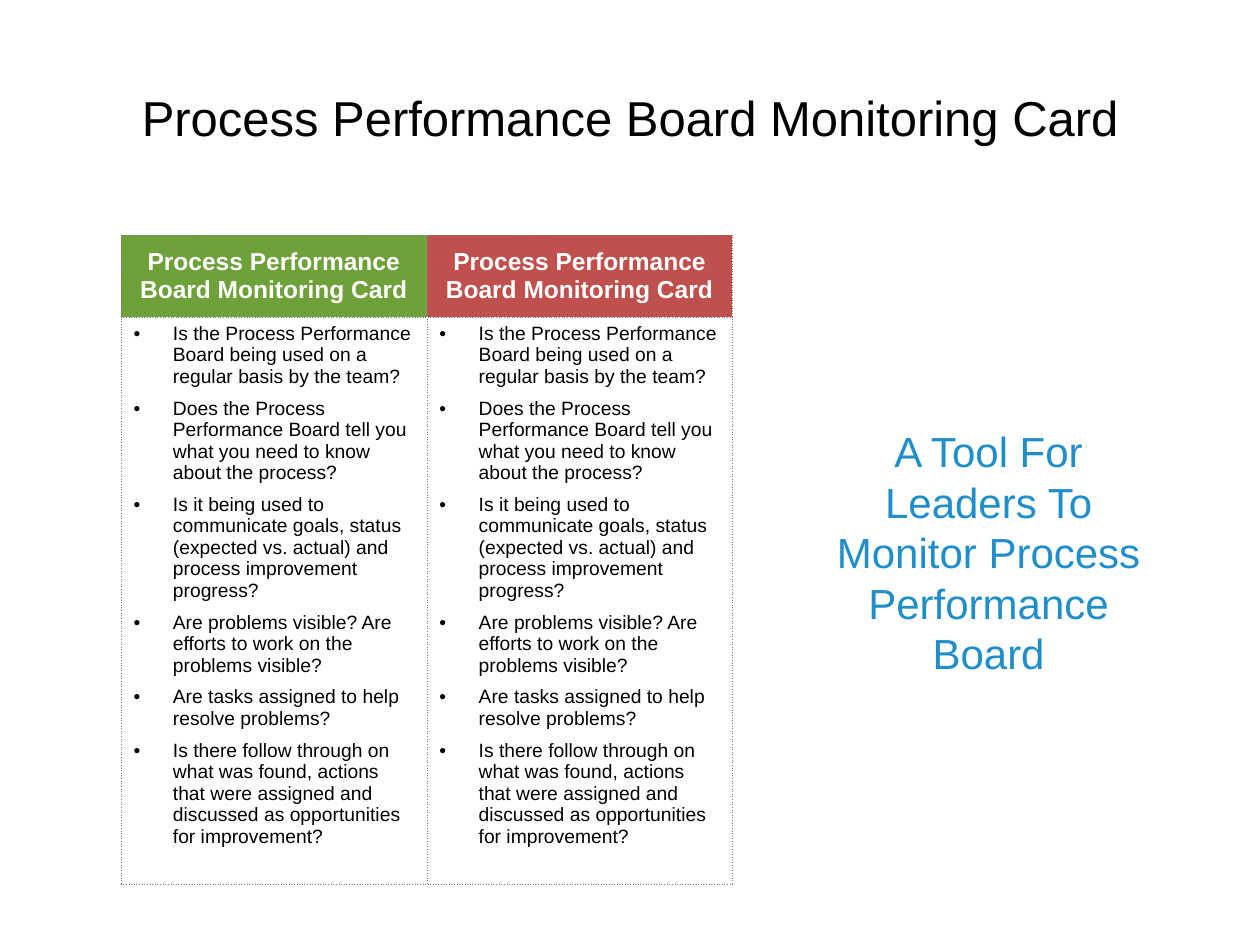
from dataclasses import dataclass

from lxml import etree
from pptx import Presentation
from pptx.dml.color import RGBColor
from pptx.enum import text as t
from pptx.oxml import ns
from pptx.util import Pt

COLORS = {
    "ink": "000000",
    "white": "FFFFFF",
    "green": "6EA139",
    "red": "C0504D",
    "blue": "208ECB",
    "border": "7F7F7F",
}
FONT = "Arial"
CARD_TITLE = "Process Performance Board Monitoring Card"
QUESTIONS = [
    "Is the Process Performance Board being used on a regular basis by the team?",
    "Does the Process Performance Board tell you what you need to know about the process?",
    "Is it being used to communicate goals, status (expected vs. actual) "
    "and process improvement progress?",
    "Are problems visible? Are efforts to work on the problems visible?",
    "Are tasks assigned to help resolve problems?",
    "Is there follow through on what was found, actions that were assigned "
    "and discussed as opportunities for improvement?",
]
CARD_COLORS = ["green", "red"]
CARD_WIDTH = 174.75
HEADER_HEIGHT, BODY_HEIGHT = 46.8, 324.5
BULLET_INDENT = 22.5


@dataclass
class Caption:
    wording: str
    left: float
    top: float
    width: float
    height: float
    size: float
    color: str
    anchor: t.MSO_ANCHOR


CAPTIONS = [
    Caption(CARD_TITLE, 36, 21.6, 648, 90, 28, "ink", t.MSO_ANCHOR.MIDDLE),
    Caption("A Tool For Leaders To Monitor Process Performance Board",
            466.6, 239.8, 196.6, 152.6, 24, "blue", t.MSO_ANCHOR.TOP),
]


def rgb(color: str) -> RGBColor:
    return RGBColor.from_string(COLORS[color])


def style_paragraph(paragraph, size: float, color: str, bold: bool = False) -> None:
    for run in paragraph.runs:
        run.font.name = FONT
        run.font.size = Pt(size)
        run.font.bold = bold
        run.font.color.rgb = rgb(color)


def add_caption(slide, caption: Caption) -> None:
    box = slide.shapes.add_textbox(
        Pt(caption.left), Pt(caption.top), Pt(caption.width), Pt(caption.height))
    frame = box.text_frame
    frame.word_wrap = True
    frame.vertical_anchor = caption.anchor
    frame.text = caption.wording
    paragraph = frame.paragraphs[0]
    paragraph.alignment = t.PP_ALIGN.CENTER
    style_paragraph(paragraph, caption.size, caption.color)


def add_borders(cell) -> None:
    """Put a fine dotted line on all four sides; call before setting the fill."""
    properties = cell._tc.get_or_add_tcPr()
    for side in ("a:lnL", "a:lnR", "a:lnT", "a:lnB"):
        line = etree.SubElement(properties, ns.qn(side), w=str(Pt(0.25)))
        fill = etree.SubElement(line, ns.qn("a:solidFill"))
        etree.SubElement(fill, ns.qn("a:srgbClr"), val=COLORS["border"])
        etree.SubElement(line, ns.qn("a:prstDash"), val="sysDot")


def add_bullet(paragraph) -> None:
    properties = paragraph._p.get_or_add_pPr()
    properties.set("marL", str(Pt(BULLET_INDENT)))
    properties.set("indent", str(-Pt(BULLET_INDENT)))
    etree.SubElement(properties, ns.qn("a:buFont"), typeface=FONT)
    etree.SubElement(properties, ns.qn("a:buChar"), char="•")


def fill_header(cell, color: str) -> None:
    add_borders(cell)
    cell.fill.solid()
    cell.fill.fore_color.rgb = rgb(color)
    cell.vertical_anchor = t.MSO_ANCHOR.MIDDLE
    cell.text_frame.text = CARD_TITLE
    heading = cell.text_frame.paragraphs[0]
    heading.alignment = t.PP_ALIGN.CENTER
    style_paragraph(heading, 14, "white", bold=True)


def fill_questions(cell) -> None:
    add_borders(cell)
    cell.fill.background()
    cell.vertical_anchor = t.MSO_ANCHOR.TOP
    cell.text_frame.text = "\n".join(QUESTIONS)
    for question in cell.text_frame.paragraphs:
        question.space_after = Pt(6)
        add_bullet(question)
        style_paragraph(question, 11, "ink")


def add_cards(slide) -> None:
    cards = slide.shapes.add_table(
        2, len(CARD_COLORS), Pt(69.1), Pt(134.2),
        Pt(CARD_WIDTH * len(CARD_COLORS)), Pt(HEADER_HEIGHT + BODY_HEIGHT)).table
    cards.horz_banding = False
    cards.rows[0].height = Pt(HEADER_HEIGHT)
    cards.rows[1].height = Pt(BODY_HEIGHT)
    for column, color in enumerate(CARD_COLORS):
        cards.columns[column].width = Pt(CARD_WIDTH)
        fill_header(cards.cell(0, column), color)
        fill_questions(cards.cell(1, column))


def main() -> None:
    deck = Presentation()
    deck.slide_width, deck.slide_height = Pt(720), Pt(540)
    slide = deck.slides.add_slide(deck.slide_layouts[6])
    slide.background.fill.solid()
    slide.background.fill.fore_color.rgb = rgb("white")
    add_cards(slide)
    for caption in CAPTIONS:
        add_caption(slide, caption)
    deck.save("out.pptx")


if __name__ == "__main__":
    main()
